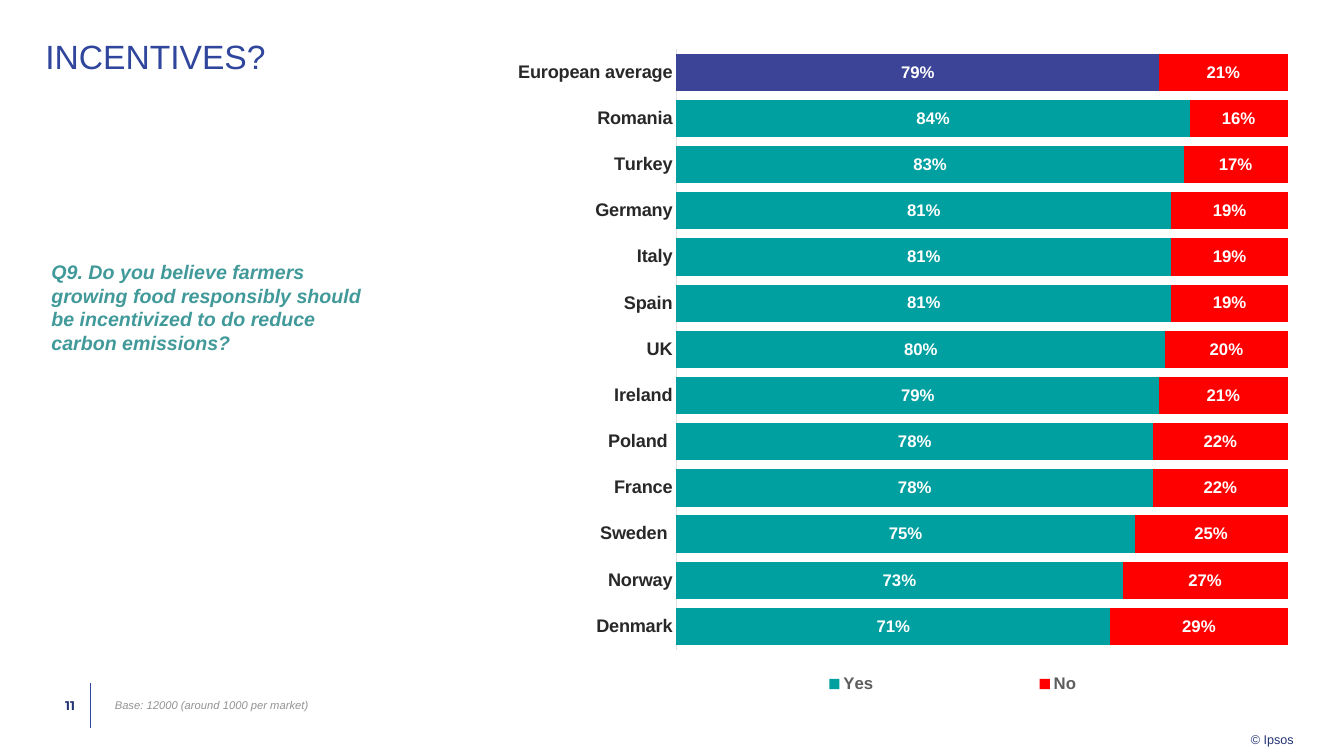
import pptx
import pptx.chart.data
import pptx.dml.color
import pptx.enum.chart
import pptx.enum.shapes
import pptx.enum.text
import pptx.oxml
import pptx.oxml.ns
import pptx.util

Pt = pptx.util.Pt
RGB = pptx.dml.color.RGBColor
ALIGN = pptx.enum.text.PP_ALIGN
ANCHOR = pptx.enum.text.MSO_ANCHOR

BLUE = RGB(0x2F, 0x46, 0x9C)
NAVY = RGB(0x23, 0x34, 0x75)
INDIGO = RGB(0x3B, 0x44, 0x96)
TEAL = RGB(0x00, 0x9F, 0xA0)
SAGE = RGB(0x41, 0x99, 0x99)
RED = RGB(0xFF, 0x00, 0x00)
INK = RGB(0x28, 0x28, 0x28)
SLATE = RGB(0x5E, 0x5E, 0x5E)
GREY = RGB(0x93, 0x93, 0x93)
PALE = RGB(0xDF, 0xDF, 0xDF)
WHITE = RGB(0xFF, 0xFF, 0xFF)

YES = {
    "European average": 0.79, "Romania": 0.84, "Turkey": 0.83,
    "Germany": 0.81, "Italy": 0.81, "Spain": 0.81, "UK": 0.8,
    "Ireland": 0.79, "Poland ": 0.78, "France": 0.78, "Sweden ": 0.75,
    "Norway": 0.73, "Denmark": 0.71,
}


class Sheet:
    def __init__(self, slide, face):
        self.slide = slide
        self.face = face

    def style(self, font, size, color, bold=False, italic=False, face=None):
        font.name = face or self.face
        font.size = Pt(size)
        font.color.rgb = color
        font.bold = bold
        font.italic = italic

    def fill(self, shape, box, text, size, color, inset=(0, 0, 0, 0),
             anchor=ANCHOR.TOP, align=ALIGN.LEFT, wrap=True, **look):
        """Place a text shape, set its words and format them."""
        shape.left, shape.top, shape.width, shape.height = map(Pt, box)
        frame = shape.text_frame
        frame.text = text
        frame.auto_size = pptx.enum.text.MSO_AUTO_SIZE.NONE
        frame.word_wrap = wrap
        frame.vertical_anchor = anchor
        (frame.margin_left, frame.margin_top,
         frame.margin_right, frame.margin_bottom) = map(Pt, inset)
        para = frame.paragraphs[0]
        para.alignment = align
        for run in para.runs:
            self.style(run.font, size, color, **look)
        return para

    def title(self, box, text, size, color):
        para = self.fill(self.slide.shapes.title, box, text, size, color)
        para.line_spacing = 0.9

    def text(self, box, *args, **look):
        shape = self.slide.shapes.add_textbox(*map(Pt, box))
        return self.fill(shape, box, *args, **look)

    def line(self, ends, color, width):
        rule = self.slide.shapes.add_connector(
            pptx.enum.shapes.MSO_CONNECTOR.STRAIGHT, *map(Pt, ends))
        rule.line.color.rgb = color
        rule.line.width = Pt(width)
        pptx.oxml.ns  # namespace map used by SubElement below
        rule._element.spPr.append(pptx.oxml.parse_xml(
            "<a:effectLst %s/>" % pptx.oxml.ns.nsdecls("a")))

    def layout(self, x, y, w, h, inner=False):
        """Return a manual chart layout, in shares of the chart's size."""
        target = '<c:layoutTarget val="inner"/>' if inner else ""
        parts = "".join('<c:%s val="%s"/>' % pair for pair in (
            ("xMode", "edge"), ("yMode", "edge"),
            ("x", x), ("y", y), ("w", w), ("h", h)))
        return pptx.oxml.parse_xml(
            "<c:layout %s><c:manualLayout>%s%s</c:manualLayout></c:layout>"
            % (pptx.oxml.ns.nsdecls("c"), target, parts))

    def bars(self, box, shares):
        """Add the stacked Yes/No chart, with its first bar set apart."""
        data = pptx.chart.data.CategoryChartData(number_format="0%")
        data.categories = list(shares)
        data.add_series("Yes", list(shares.values()))
        data.add_series("No", [round(1 - part, 2) for part in shares.values()])
        kind = pptx.enum.chart.XL_CHART_TYPE.BAR_STACKED_100
        chart = self.slide.shapes.add_chart(kind, *map(Pt, box), data).chart
        self.style(chart.font, 10, INK)
        chart.has_title = False

        plot = chart.plots[0]
        plot.gap_width = 24
        plot.overlap = 100
        plot.vary_by_categories = False
        for series, color in zip(plot.series, (TEAL, RED)):
            series.format.fill.solid()
            series.format.fill.fore_color.rgb = color
            labels = series.data_labels
            labels.show_value = True
            labels.number_format = "0%"
            labels.number_format_is_linked = False
            labels.position = pptx.enum.chart.XL_LABEL_POSITION.CENTER
            self.style(labels.font, 12, WHITE, bold=True)
        first = plot.series[0].points[0].format.fill
        first.solid()
        first.fore_color.rgb = INDIGO

        axis = chart.category_axis
        axis.reverse_order = True
        axis.major_tick_mark = pptx.enum.chart.XL_TICK_MARK.NONE
        axis.format.line.color.rgb = PALE
        axis.format.line.width = Pt(0.75)
        self.style(axis.tick_labels.font, 13, INK, bold=True)
        chart.value_axis.has_major_gridlines = False
        chart.value_axis.visible = False

        chart.has_legend = True
        legend = chart.legend
        legend.position = pptx.enum.chart.XL_LEGEND_POSITION.BOTTOM
        legend.include_in_layout = False
        self.style(legend.font, 12, SLATE, bold=True)
        spot = pptx.oxml.ns.qn("c:layout")
        area = chart._chartSpace.chart.plotArea
        for node in (area, legend._element):
            for old in node.findall(spot):
                node.remove(old)
        area.insert(0, self.layout(0.2, 0.013, 0.785, 0.872, inner=True))
        mark = legend._element.find(pptx.oxml.ns.qn("c:legendPos"))
        mark.addnext(self.layout(0.19, 0.91, 0.73, 0.05))


def main():
    deck = pptx.Presentation()
    deck.slide_width, deck.slide_height = Pt(960), Pt(540)
    sheet = Sheet(deck.slides.add_slide(deck.slide_layouts[5]), "Arial")

    sheet.line((64.8, 488.2, 64.8, 519.8), BLUE, 0.5)
    sheet.text((893.5, 519.8, 31, 13.7), "© Ipsos", 9, NAVY,
               inset=(0, 2.9, 0, 0), wrap=False)
    sheet.text((32.4, 488.2, 32.4, 31), "11 ", 9, NAVY, inset=(0, 0, 8.6, 0),
               anchor=ANCHOR.MIDDLE, align=ALIGN.RIGHT, bold=True,
               face="Montserrat")
    sheet.title((32.4, 28.8, 337.7, 30.2), "INCENTIVES?", 24, BLUE)
    sheet.bars((370.1, 28.8, 558, 491.8), YES)
    para = sheet.text(
        (36.7, 185.8, 238.3, 67.7),
        "Q9. Do you believe farmers growing food responsibly should be "
        "incentivized to do reduce carbon emissions?",
        14, SAGE, bold=True, italic=True)
    para.space_after = Pt(4)
    sheet.text((74.9, 488.2, 200.2, 31), "Base: 12000 (around 1000 per market)",
               8, GREY, inset=(7.2, 3.6, 7.2, 3.6), anchor=ANCHOR.MIDDLE,
               italic=True)
    deck.save("out.pptx")


if __name__ == "__main__":
    main()
